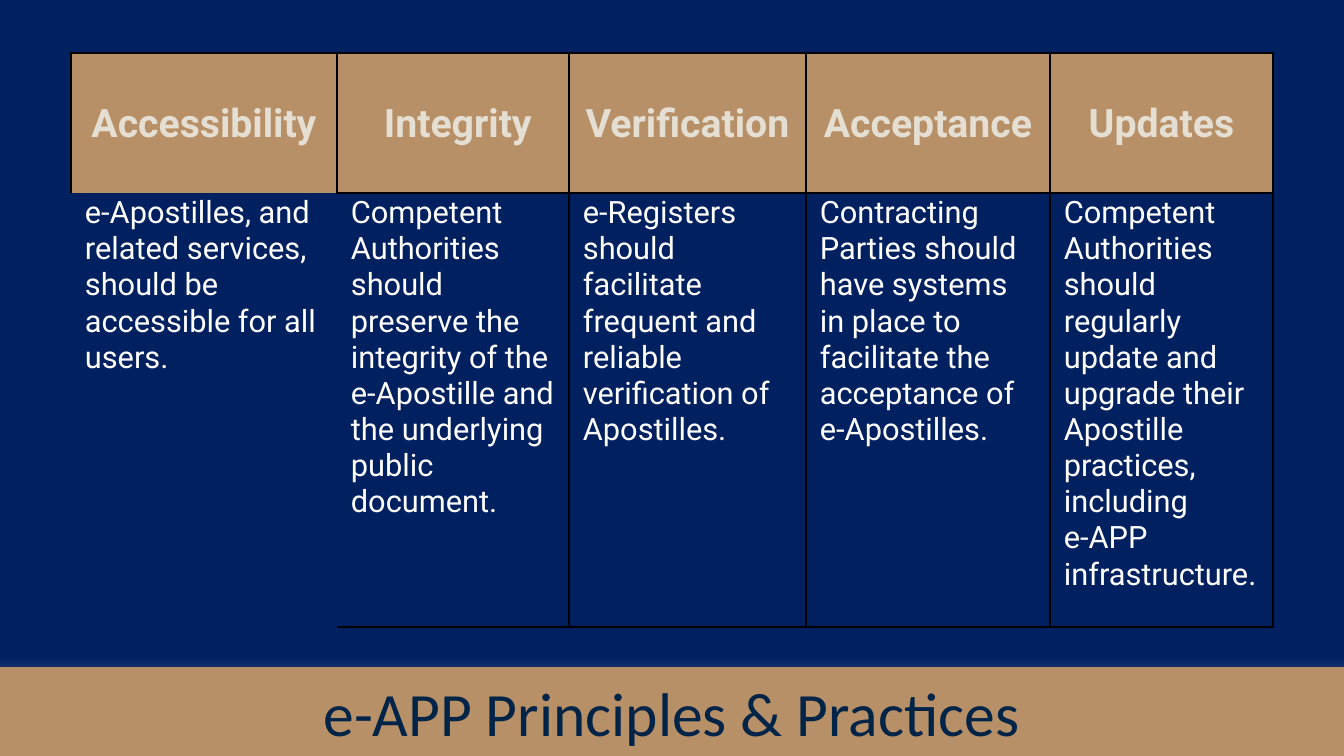
from pptx import Presentation
from pptx.dml.color import RGBColor
from pptx.enum import shapes, text
from pptx.oxml import parse_xml
from pptx.oxml.ns import nsdecls
from pptx.util import Pt

PX = 914400 / 100.8
WIDTH, HEIGHT = 1344, 756
COLORS = {"navy": "002060", "mist": "C7D5ED", "tan": "B89068", "cream": "E4DFD2",
          "white": "FFFFFF", "ink": "002447", "black": "000000"}
NO_STYLE = "{2D5ABB26-0587-4C30-8999-92F81FD0307C}"

HEADER = {"size": Pt(28), "name": "Roboto", "bold": True}
BODY = {"size": Pt(22), "name": "Roboto", "bold": False}
TITLE = {"size": Pt(44), "name": "Calibri", "bold": False}

# Heading, column width, paragraphs
PRINCIPLES = [
    ("Accessibility", 266,
     ["e-Apostilles, and related services, should be accessible for all users."]),
    (" Integrity", 232,
     ["Competent Authorities should preserve the integrity of the e-Apostille "
      "and the underlying public document."]),
    ("Verification", 237,
     ["e-Registers should facilitate frequent and reliable verification of Apostilles."]),
    ("Acceptance", 244,
     ["Contracting Parties should have systems in place to facilitate the "
      "acceptance of e-Apostilles."]),
    ("Updates", 223,
     ["Competent Authorities should regularly update and upgrade their "
      "Apostille practices, including", "e-APP infrastructure."]),
]


def px(length):
    return round(length * PX)


def color(name):
    return RGBColor.from_string(COLORS[name])


def write(frame, lines, font, ink, align):
    for index, line in enumerate(lines):
        para = frame.add_paragraph() if index else frame.paragraphs[0]
        para.alignment = align
        span = para.add_run()
        span.text = line
        for key, value in font.items():
            setattr(span.font, key, value)
        span.font.color.rgb = color(ink)


def set_borders(cell, sides):
    properties = cell._tc.get_or_add_tcPr()
    for side in "LRTB":
        if side in sides:
            properties.append(parse_xml(
                f'<a:ln{side} {nsdecls("a")} w="12700"><a:solidFill>'
                f'<a:srgbClr val="{COLORS["black"]}"/></a:solidFill></a:ln{side}>'))


def set_background(page):
    fill = page.background.fill
    fill.gradient()
    fill.gradient_angle = 270
    for stop, position, name in zip(fill.gradient_stops, (0.87, 1), ("navy", "mist")):
        stop.position = position
        stop.color.rgb = color(name)


def fill_cell(cell, lines, font, ink, align, anchor, sides):
    margins = {"margin_left": px(14), "margin_right": px(14),
               "margin_top": px(2), "margin_bottom": 0}
    for key, value in margins.items():
        setattr(cell, key, value)
    cell.vertical_anchor = anchor
    set_borders(cell, sides)
    write(cell.text_frame, lines, font, ink, align)


def add_principles(page, left, top, width, height):
    frame = page.shapes.add_table(2, len(PRINCIPLES), px(left), px(top),
                                  px(width), px(height))
    table = frame.table
    table.first_row = table.horz_banding = False
    table._tbl.tblPr.find("{*}tableStyleId").text = NO_STYLE
    header_height = 140
    for row, row_height in zip(table.rows, (header_height, height - header_height)):
        row.height = px(row_height)
    for index, (heading, column_width, lines) in enumerate(PRINCIPLES):
        table.columns[index].width = px(column_width)
        head, body = table.cell(0, index), table.cell(1, index)
        fill_cell(head, [heading], HEADER, "cream", text.PP_ALIGN.CENTER,
                  text.MSO_ANCHOR.MIDDLE, "LRTB" if index else "LRT")
        head.fill.solid()
        head.fill.fore_color.rgb = color("tan")
        fill_cell(body, lines, BODY, "white", text.PP_ALIGN.LEFT,
                  text.MSO_ANCHOR.TOP, "RTB" if index else "")
        body.fill.background()


def add_title_band(page, left, top, width, height):
    band = page.shapes.add_shape(shapes.MSO_SHAPE.RECTANGLE, px(left), px(top),
                                 px(width), px(height))
    band.shadow.inherit = False
    band.fill.solid()
    band.fill.fore_color.rgb = color("tan")
    band.line.color.rgb = color("tan")
    band.line.width = Pt(1)
    band.text_frame.word_wrap = True
    band.text_frame.vertical_anchor = text.MSO_ANCHOR.MIDDLE
    write(band.text_frame, ["e-APP Principles & Practices"], TITLE, "ink",
          text.PP_ALIGN.CENTER)


def main():
    deck = Presentation()
    deck.slide_width, deck.slide_height = px(WIDTH), px(HEIGHT)
    page = deck.slides.add_slide(deck.slide_layouts[6])
    set_background(page)
    add_principles(page, 71, 53, sum(width for _, width, _ in PRINCIPLES), 574)
    band_height = 88
    add_title_band(page, 0, HEIGHT - band_height, WIDTH, band_height)
    deck.save("out.pptx")


if __name__ == "__main__":
    main()
